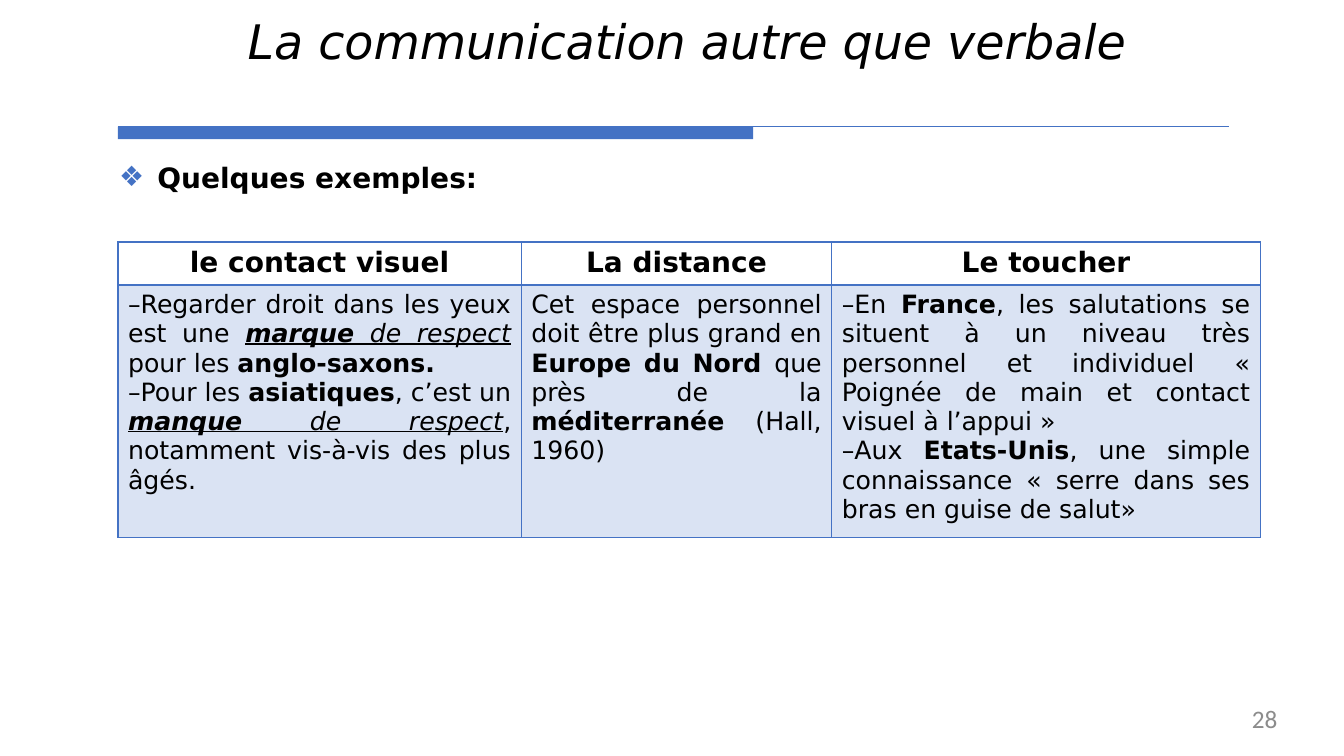
from lxml import etree
from pptx import Presentation
from pptx.dml.color import RGBColor
from pptx.enum.shapes import MSO_CONNECTOR, MSO_SHAPE
from pptx.enum.text import MSO_ANCHOR, MSO_AUTO_SIZE, PP_ALIGN
from pptx.oxml.ns import qn
from pptx.util import Inches, Pt

BLUE = RGBColor(0x44, 0x72, 0xC4)
PALE_BLUE = RGBColor(0xDA, 0xE3, 0xF3)
BLACK = RGBColor(0, 0, 0)
WHITE = RGBColor(0xFF, 0xFF, 0xFF)
GRAY = RGBColor(0x8C, 0x8C, 0x8C)
CENTER, RIGHT, JUSTIFY = PP_ALIGN.CENTER, PP_ALIGN.RIGHT, PP_ALIGN.JUSTIFY
TOP, NONE = MSO_ANCHOR.TOP, MSO_AUTO_SIZE.NONE
FONT = "DejaVu Sans"
LEFT = Inches(1.17)

HEADERS = ["le contact visuel", "La distance", "Le toucher"]
COLUMN_WIDTHS = [4, 3.08, 4.25]
ROW_HEIGHTS = [0.43, 2.5]
EXAMPLES = [
    [
        [("–Regarder droit dans les yeux est une ", ""), ("marque", "biu"),
         (" de respect ", "iu"), ("pour les ", ""), ("anglo-saxons. ", "b")],
        [("–Pour les ", ""), ("asiatiques", "b"), (", c’est un ", ""),
         ("manque", "biu"), (" de respect", "iu"),
         (", notamment vis-à-vis des plus âgés.", "")],
    ],
    [
        [("Cet espace personnel doit être plus grand en ", ""),
         ("Europe du Nord ", "b"), ("que près de la ", ""),
         ("méditerranée", "b"), (" (Hall, 1960)", "")],
    ],
    [
        [("–En ", ""), ("France", "b"),
         (", les salutations se situent à un niveau très personnel et "
          "individuel « Poignée de main et contact visuel à l’appui »", "")],
        [("–Aux ", ""), ("Etats-Unis", "b"),
         (", une simple connaissance « serre dans ses bras en guise de salut»", "")],
    ],
]


def write(p, runs, size, align, color=BLACK, font=FONT):
    p.alignment = align
    p.space_before = Pt(0)
    for text, style in runs:
        r = p.add_run()
        r.text = text
        r.font.name = font
        r.font.size = Pt(size)
        r.font.color.rgb = color
        r.font.bold = "b" in style
        r.font.italic = "i" in style
        r.font.underline = "u" in style


def set_borders(cell, widths):
    tcPr = cell._tc.get_or_add_tcPr()
    for i, (side, width) in enumerate(zip("LRTB", widths)):
        ln = etree.Element(qn(f"a:ln{side}"), w=str(Pt(width)))
        fill = etree.SubElement(ln, qn("a:solidFill"))
        etree.SubElement(fill, qn("a:srgbClr"), val=str(BLUE))
        tcPr.insert(i, ln)


prs = Presentation()
prs.slide_width = Inches(13.33)
prs.slide_height = Inches(7.5)
s = prs.slides.add_slide(prs.slide_layouts[1])

title, body = s.placeholders
title.left, title.top = Inches(0.48), Inches(0.11)
title.width, title.height = Inches(12.67), Inches(0.59)
body.left, body.top = LEFT, Inches(1.58)
body.width, body.height = Inches(11.33), Inches(0.5)
number = s.shapes.add_textbox(Inches(9.6), Inches(6.98), Inches(3.07), Inches(0.3))
for sp in (title, body, number):
    tf = sp.text_frame
    tf.word_wrap = True
    tf.auto_size = NONE
    tf.vertical_anchor = TOP
    tf.margin_left = tf.margin_right = tf.margin_bottom = 0
    tf.margin_top = 0 if sp is number else Inches(0.01)

write(title.text_frame.paragraphs[0],
      [("La communication autre que verbale", "i")], 34, CENTER)
write(number.text_frame.paragraphs[0], [("28", "")], 18, RIGHT, GRAY, "Calibri")

p = body.text_frame.paragraphs[0]
pPr = p._p.get_or_add_pPr()
pPr.set("marL", str(Inches(0.39)))
pPr.set("indent", str(Inches(-0.38)))
buClr = etree.SubElement(pPr, qn("a:buClr"))
etree.SubElement(buClr, qn("a:srgbClr"), val=str(BLUE))
etree.SubElement(pPr, qn("a:buChar"), char="❖")
write(p, [("Quelques exemples:", "b")], 20, JUSTIFY)

bar = s.shapes.add_shape(MSO_SHAPE.RECTANGLE, LEFT, Inches(1.26), Inches(6.3), Inches(0.12))
bar.shadow.inherit = False
bar.fill.solid()
bar.fill.fore_color.rgb = BLUE
bar.line.fill.background()

rule = s.shapes.add_connector(MSO_CONNECTOR.STRAIGHT, LEFT, Inches(1.25),
                              Inches(12.19), Inches(1.25))
rule.line.color.rgb = BLUE
rule.line.width = Pt(0.72)
etree.SubElement(rule._element.spPr, qn("a:effectLst"))

table = s.shapes.add_table(2, 3, LEFT, Inches(2.4), Inches(sum(COLUMN_WIDTHS)),
                           Inches(sum(ROW_HEIGHTS))).table
table.first_row = table.horz_banding = False
for row, height in zip(table.rows, ROW_HEIGHTS):
    row.height = Inches(height)
for c, (header, paragraphs) in enumerate(zip(HEADERS, EXAMPLES)):
    table.columns[c].width = Inches(COLUMN_WIDTHS[c])
    head, cell = table.cell(0, c), table.cell(1, c)
    for box, color, widths in ((head, WHITE, (1, 1, 1, 2)),
                               (cell, PALE_BLUE, (1, 1, 2, 1))):
        box.fill.solid()
        box.fill.fore_color.rgb = color
        set_borders(box, widths)
    write(head.text_frame.paragraphs[0], [(header, "b")], 20, CENTER)
    tf = cell.text_frame
    for i, runs in enumerate(paragraphs):
        p = tf.add_paragraph() if i else tf.paragraphs[0]
        write(p, runs, 18, JUSTIFY)

prs.save("out.pptx")
